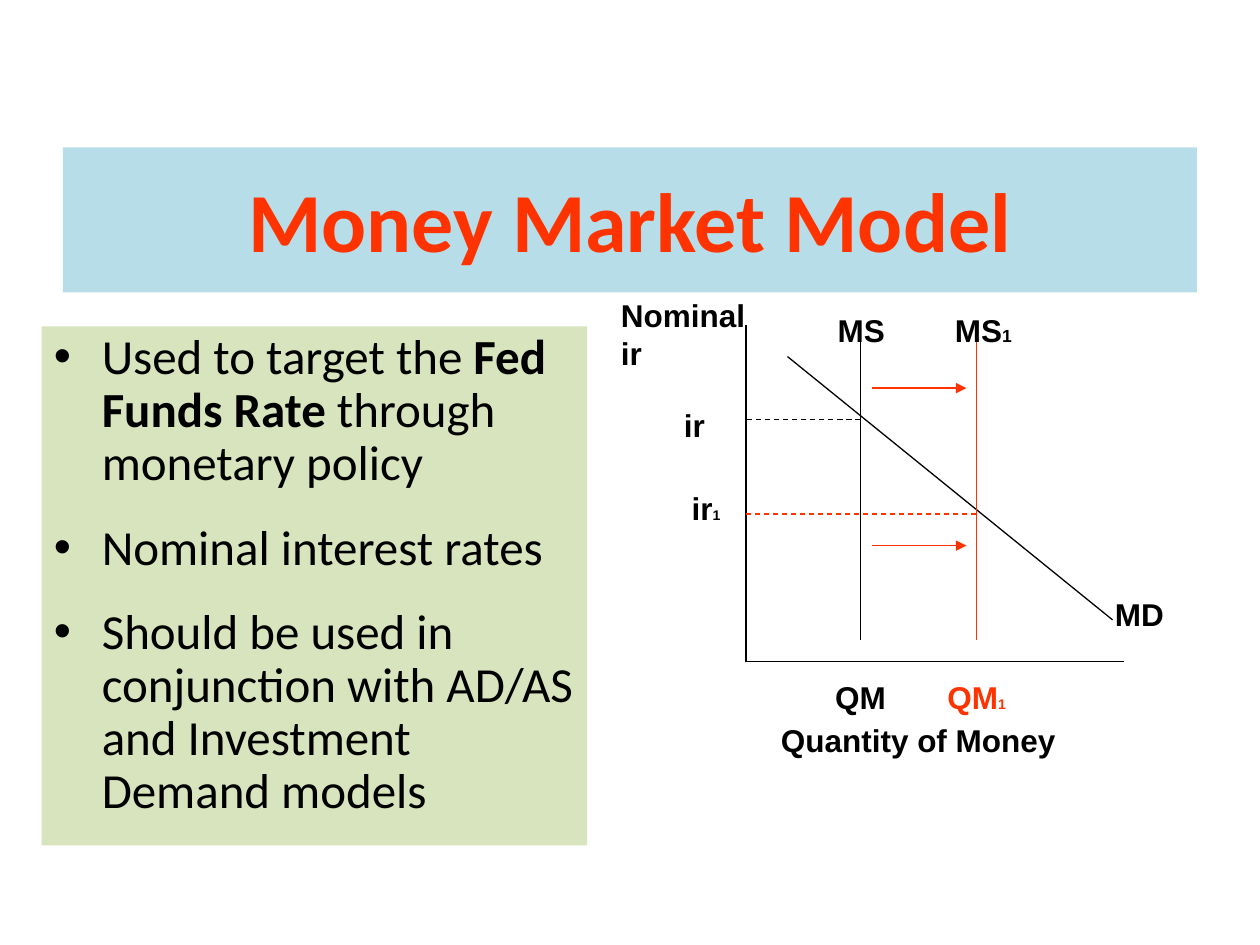
from typing import NamedTuple, Optional

from lxml.etree import SubElement
from pptx import Presentation
from pptx.dml.color import RGBColor
from pptx.enum.dml import MSO_LINE_DASH_STYLE as Dash
from pptx.enum.shapes import MSO_CONNECTOR as Connector, MSO_SHAPE as Shape
from pptx.enum.text import MSO_ANCHOR as Anchor, PP_ALIGN as Align
from pptx.oxml.ns import qn
from pptx.util import Inches, Pt

COLORS = {"title_band": "B7DEE8", "notes_panel": "D7E4BD",
          "black": "000000", "red": "FF3300"}


class Curve(NamedTuple):
    start: tuple[float, float]
    end: tuple[float, float]
    color: str = "black"
    dashed: bool = False
    arrow: bool = False


class Label(NamedTuple):
    words: str
    left: float
    top: float
    width: float = 0.75
    height: float = 0.4
    index: str = ""
    index_size: int = 8
    color: str = "black"


class Point(NamedTuple):
    before: str
    strong: str = ""
    after: str = ""


AXIS_X, AXIS_Y, AXIS_TOP = 5.92, 5.25, 2.58
SUPPLY_X, NEW_SUPPLY_X = 6.83, 7.75
SUPPLY_TOP, SUPPLY_BOTTOM = 2.67, 5.08
RATE_Y, NEW_RATE_Y = 3.33, 4.08
SHIFT_START, SHIFT_END = 6.92, 7.67

CURVES = [
    Curve((AXIS_X, AXIS_TOP), (AXIS_X, AXIS_Y)),
    Curve((AXIS_X, AXIS_Y), (8.92, AXIS_Y)),
    Curve((6.25, 2.83), (8.83, 4.92)),
    Curve((SUPPLY_X, SUPPLY_TOP), (SUPPLY_X, SUPPLY_BOTTOM)),
    Curve((NEW_SUPPLY_X, SUPPLY_TOP), (NEW_SUPPLY_X, SUPPLY_BOTTOM), "red"),
    Curve((SUPPLY_X, RATE_Y), (AXIS_X, RATE_Y), dashed=True),
    Curve((NEW_SUPPLY_X, NEW_RATE_Y), (AXIS_X, NEW_RATE_Y), "red", dashed=True),
    *(Curve((SHIFT_START, y), (SHIFT_END, y), "red", arrow=True)
      for y in (3.08, 4.33)),
]

LABELS = [
    Label("Nominal ir", 4.83, 2.3, 1.25, 0.7),
    Label("ir", 5.33, 3.17, 0.42),
    Label("ir", 5.39, 3.83, index="1"),
    Label("MS", 6.55, 2.42),
    Label("MS", 7.48, 2.42, index="1", index_size=10),
    Label("MD", 8.75, 4.67),
    Label("QM", 6.53, 5.33),
    Label("QM", 7.42, 5.33, index="1", color="red"),
    Label("Quantity of Money", 6.1, 5.67, 2.5),
]

POINTS = [
    Point("Used to target the ", "Fed Funds Rate", " through monetary policy"),
    Point("Nominal interest rates"),
    Point("Should be used in conjunction with AD/AS and Investment Demand models"),
]


def rgb(name: str) -> RGBColor:
    return RGBColor.from_string(COLORS[name])


def style(font, face: str, size: int, color: str, bold: Optional[bool] = None) -> None:
    font.name = face
    font.size = Pt(size)
    font.color.rgb = rgb(color)
    font.bold = bold


def add_panel(slide, left: float, top: float, width: float, height: float,
              color: str, anchor):
    panel = slide.shapes.add_shape(Shape.RECTANGLE, Inches(left), Inches(top),
                                   Inches(width), Inches(height))
    panel.shadow.inherit = False
    panel.fill.solid()
    panel.fill.fore_color.rgb = rgb(color)
    panel.line.fill.background()
    panel.text_frame.word_wrap = True
    panel.text_frame.vertical_anchor = anchor
    return panel.text_frame


def add_title(slide) -> None:
    frame = add_panel(slide, 0.5, 1.17, 9, 1.15, "title_band", Anchor.MIDDLE)
    frame.text = "Money Market Model"
    heading = frame.paragraphs[0]
    heading.alignment = Align.CENTER
    heading.line_spacing = Pt(57)
    style(heading.runs[0].font, "Calibri", 48, "red", True)


def add_points(slide, points: list[Point]) -> None:
    frame = add_panel(slide, 0.33, 2.59, 4.33, 4.12, "notes_panel", Anchor.TOP)
    for number, point in enumerate(points):
        paragraph = frame.add_paragraph() if number else frame.paragraphs[0]
        paragraph.alignment = Align.LEFT
        paragraph.line_spacing = 0.9
        paragraph.space_after = Pt(18)
        properties = paragraph._p.get_or_add_pPr()
        properties.set("marL", str(Inches(0.38)))
        properties.set("indent", str(-Inches(0.38)))
        SubElement(properties, qn("a:buFont"), typeface="Arial")
        SubElement(properties, qn("a:buChar"), char="•")
        for words in filter(None, point):
            run = paragraph.add_run()
            run.text = words
            style(run.font, "Calibri", 28, "black", words == point.strong)


def add_curve(slide, curve: Curve) -> None:
    line = slide.shapes.add_connector(
        Connector.STRAIGHT, *map(Inches, curve.start + curve.end))
    line.line.color.rgb = rgb(curve.color)
    line.line.width = Pt(0.75)
    if curve.dashed:
        line.line.dash_style = Dash.DASH
    if curve.arrow:
        SubElement(line.line._get_or_add_ln(), qn("a:tailEnd"), type="triangle")
    SubElement(line._element.spPr, qn("a:effectLst"))


def add_label(slide, label: Label) -> None:
    box = slide.shapes.add_textbox(Inches(label.left), Inches(label.top),
                                   Inches(label.width), Inches(label.height))
    frame = box.text_frame
    frame.word_wrap = True
    frame.text = label.words
    paragraph = frame.paragraphs[0]
    style(paragraph.runs[0].font, "Arial", 18, label.color, True)
    if label.index:
        index = paragraph.add_run()
        index.text = label.index
        style(index.font, "Arial", label.index_size, label.color, True)


def main() -> None:
    deck = Presentation()
    deck.slide_width, deck.slide_height = Inches(10), Inches(7.5)
    slide = deck.slides.add_slide(deck.slide_layouts[6])
    add_title(slide)
    add_points(slide, POINTS)
    for curve in CURVES:
        add_curve(slide, curve)
    for label in LABELS:
        add_label(slide, label)
    deck.save("out.pptx")


if __name__ == "__main__":
    main()
